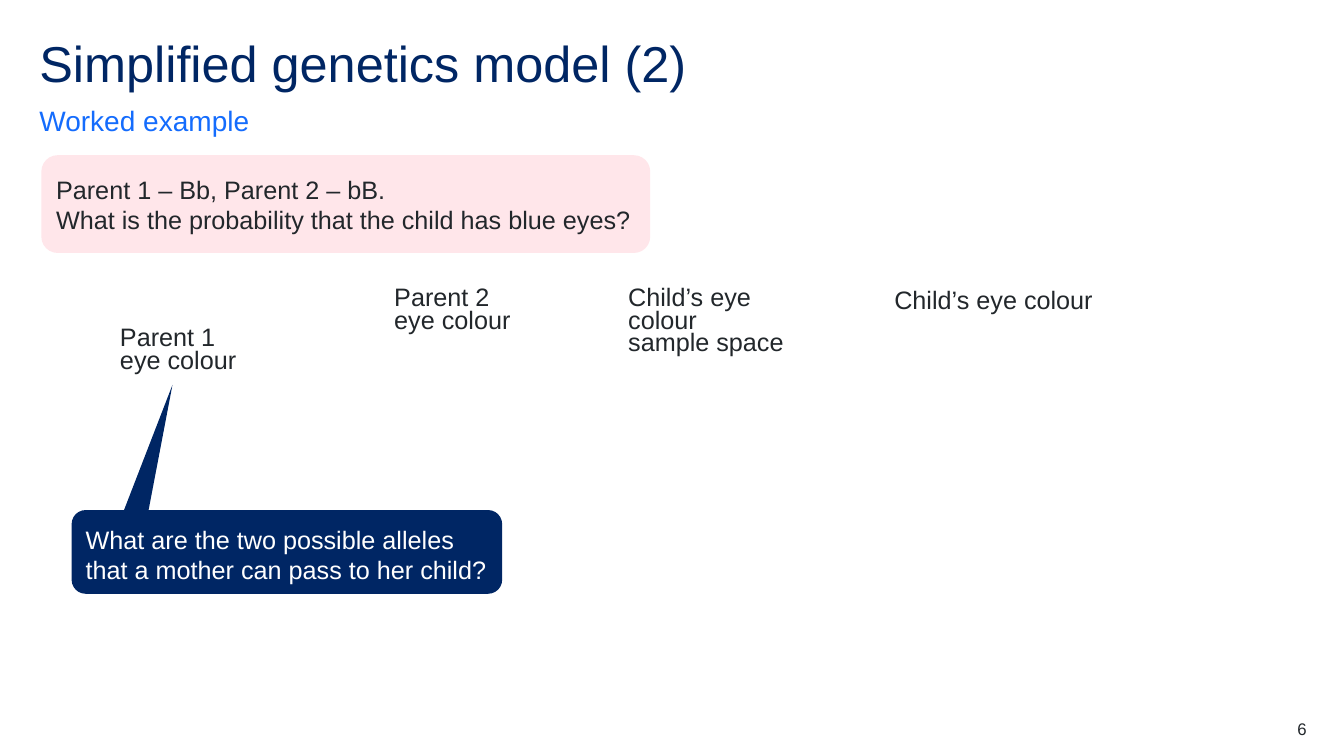
from dataclasses import dataclass

from pptx import Presentation, util as u
from pptx.dml.color import RGBColor
from pptx.enum import shapes as sh, text as t


@dataclass(frozen=True)
class Theme:
    font: str = "Arial"
    navy: str = "002664"
    blue: str = "146CFD"
    pink: str = "FFE6EA"
    ink: str = "22272B"
    white: str = "FFFFFF"
    title: int = 36
    lead: int = 20
    body: int = 18
    note: int = 12


THEME = Theme()
WIDTH, HEIGHT = u.Inches(13.33), u.Inches(7.5)
LEFT, SPAN = 2.93, 94.2


def place(x, y):
    """Turn percentages of the slide's width and height into lengths."""
    return u.Emu(round(WIDTH * x / 100)), u.Emu(round(HEIGHT * y / 100))


def paint(shape, color):
    shape.shadow.inherit = False
    shape.fill.solid()
    shape.fill.fore_color.rgb = RGBColor.from_string(color)
    shape.line.fill.background()


def write(frame, words, size, color, spacing=1.0, align=t.PP_ALIGN.LEFT):
    frame.text = words
    for para in frame.paragraphs:
        para.alignment = align
        para.line_spacing = spacing
        para.font.name = THEME.font
        para.font.size = u.Pt(size)
        para.font.color.rgb = RGBColor.from_string(color)


def add_text(slide, box, words, size, color, wrap=True, **style):
    """Add a text box without margins; box is x, y, width, height in percent."""
    frame = slide.shapes.add_textbox(*place(*box[:2]), *place(*box[2:])).text_frame
    frame.margin_left = frame.margin_right = 0
    frame.margin_top = frame.margin_bottom = 0
    frame.word_wrap = wrap
    write(frame, words, size, color, **style)
    return frame


def add_card(slide, box, words, fill, color, anchor):
    card = slide.shapes.add_shape(
        sh.MSO_SHAPE.ROUNDED_RECTANGLE, *place(*box[:2]), *place(*box[2:]))
    paint(card, fill)
    frame = card.text_frame
    frame.word_wrap = True
    frame.vertical_anchor = anchor
    write(frame, words, THEME.body, color)
    return frame


def add_tail(slide, points, color):
    first, *rest = [place(*point) for point in points]
    path = slide.shapes.build_freeform(*first)
    path.add_line_segments(rest, close=True)
    paint(path.convert_to_shape(), color)


def add_heads(slide):
    add_text(slide, (LEFT, 5.2, SPAN, 8), "Simplified genetics model (2)",
             THEME.title, THEME.navy, spacing=0.9)
    lead = add_text(slide, (LEFT, 12.93, SPAN, 5.2), "Worked example",
                    THEME.lead, THEME.blue, spacing=1.5)
    lead.vertical_anchor = t.MSO_ANCHOR.BOTTOM
    lead.paragraphs[0].space_after = u.Pt(12)


def add_labels(slide):
    labels = [
        ((8.93, 43.47, 11.85, 7.47), "Parent 1\veye colour", 0.75),
        ((29.33, 38.13, 12, 10.27), "Parent 2 \veye colour", 0.75),
        ((46.74, 38.13, 13.2, 10.27), "Child’s eye colour\nsample space", 0.75),
        ((66.54, 37.6, 16.13, 10.27), "Child’s eye colour", 1.0),
    ]
    for box, words, spacing in labels:
        add_text(slide, box, words, THEME.body, THEME.ink,
                 wrap=False, spacing=spacing)


def add_callout(slide):
    frame = add_card(
        slide, (5.33, 67.47, 32.03, 11.07),
        "What are the two possible alleles that a mother can pass to her child?",
        THEME.navy, THEME.white, t.MSO_ANCHOR.TOP)
    frame.margin_top = frame.margin_bottom = u.Inches(0.1)
    add_tail(slide, [(11.03, 67.73), (12.83, 50.93), (9.23, 67.47)], THEME.navy)


def main():
    deck = Presentation()
    deck.slide_width, deck.slide_height = WIDTH, HEIGHT
    slide = deck.slides.add_slide(deck.slide_layouts[6])
    add_heads(slide)
    add_card(slide, (3.08, 20.53, 45.3, 12.93),
             "Parent 1 – Bb, Parent 2 – bB.\n"
             "What is the probability that the child has blue eyes?",
             THEME.pink, THEME.ink, t.MSO_ANCHOR.MIDDLE)
    add_labels(slide)
    add_callout(slide)
    add_text(slide, (91.3, 95.07, 5.93, 2.67), "6", THEME.note, THEME.ink,
             align=t.PP_ALIGN.RIGHT)
    deck.save("out.pptx")


if __name__ == "__main__":
    main()
